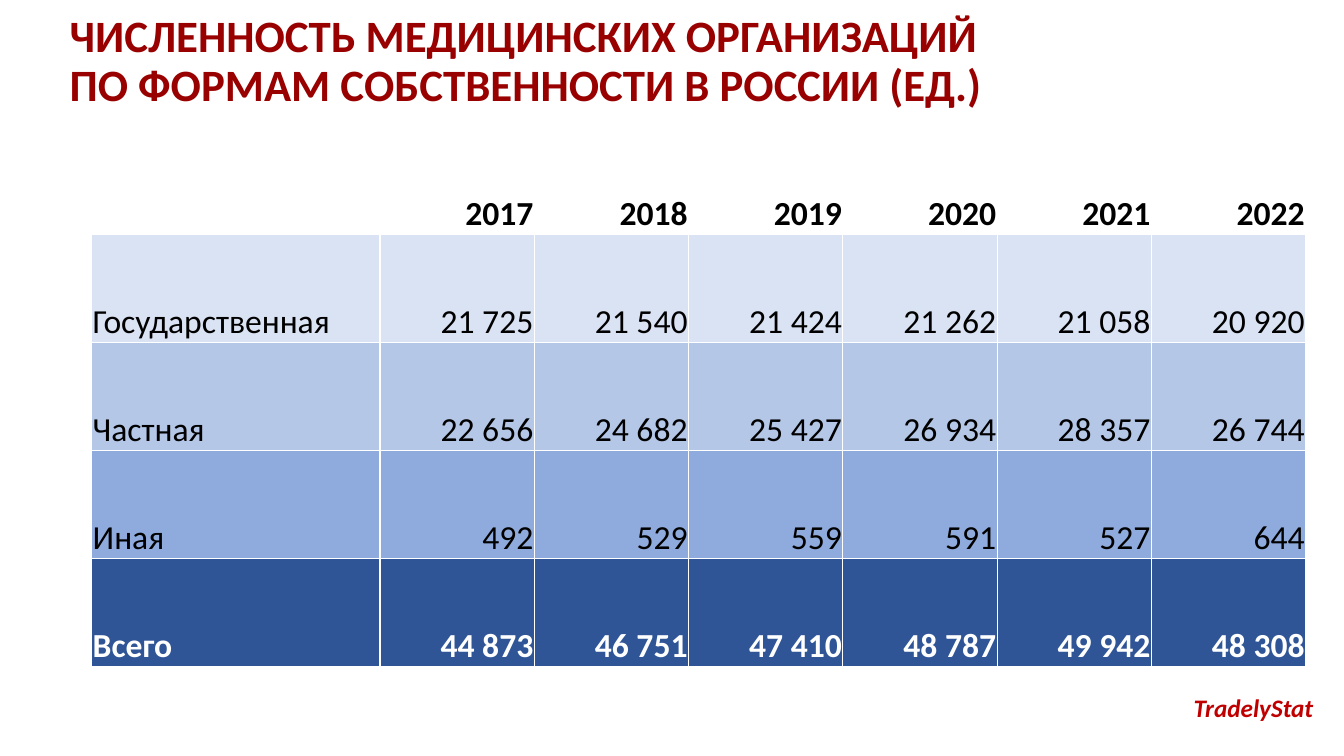
import dataclasses
import typing

import lxml.etree
import pptx
import pptx.dml.color
import pptx.enum.text
import pptx.oxml.ns
import pptx.util

Inches = pptx.util.Inches
Pt = pptx.util.Pt
PP_ALIGN = pptx.enum.text.PP_ALIGN
MSO_ANCHOR = pptx.enum.text.MSO_ANCHOR
MSO_AUTO_SIZE = pptx.enum.text.MSO_AUTO_SIZE

COLORS = {
    "title": "990000",
    "source": "C00000",
    "text": "000000",
    "white": "FFFFFF",
    "state": "DAE3F3",
    "private": "B4C7E7",
    "other": "8FAADC",
    "total": "2F5597",
}
FONT = "Calibri"
LABEL_WIDTH = 2.86
YEAR_WIDTH = 1.53
ROW_HEIGHT = 1.07


@dataclasses.dataclass(frozen=True)
class TableRow:
    label: str
    values: tuple[str, ...]
    fill: str
    color: str = "text"
    bold: bool = False


ROWS = [
    TableRow("", ("2017", "2018", "2019", "2020", "2021", "2022"), "white", bold=True),
    TableRow("Государственная", ("21 725", "21 540", "21 424", "21 262", "21 058", "20 920"), "state"),
    TableRow("Частная", ("22 656", "24 682", "25 427", "26 934", "28 357", "26 744"), "private"),
    TableRow("Иная", ("492", "529", "559", "591", "527", "644"), "other"),
    TableRow("Всего", ("44 873", "46 751", "47 410", "48 787", "49 942", "48 308"), "total", "white", True),
]


def apply(target: typing.Any, values: dict[str, typing.Any]) -> None:
    for name, value in values.items():
        setattr(target, name, value)


def rgb(color: str) -> pptx.dml.color.RGBColor:
    return pptx.dml.color.RGBColor.from_string(COLORS[color])


def write(tf: typing.Any, text: str, color: str, paragraph: dict[str, typing.Any],
          font: dict[str, typing.Any]) -> None:
    p = tf.paragraphs[0]
    apply(p, paragraph)
    r = p.add_run()
    r.text = text
    apply(r.font, {"name": FONT, **font})
    r.font.color.rgb = rgb(color)


def add_borders(cell: typing.Any) -> None:
    qn = pptx.oxml.ns.qn
    properties = cell._tc.get_or_add_tcPr()
    for side in ("lnL", "lnR", "lnT", "lnB"):
        line = lxml.etree.SubElement(properties, qn(f"a:{side}"), w=str(Pt(1)))
        fill = lxml.etree.SubElement(line, qn("a:solidFill"))
        lxml.etree.SubElement(fill, qn("a:srgbClr"), val=COLORS["white"])


def add_title(s: typing.Any) -> None:
    sp = s.shapes.title
    apply(sp, {"left": Inches(0.59), "top": Inches(0.56), "width": Inches(9.51), "height": Inches(0.59)})
    apply(sp.text_frame, {"word_wrap": True, "auto_size": MSO_AUTO_SIZE.NONE,
                          "vertical_anchor": MSO_ANCHOR.BOTTOM})
    write(sp.text_frame, "ЧИСЛЕННОСТЬ МЕДИЦИНСКИХ ОРГАНИЗАЦИЙ ПО ФОРМАМ СОБСТВЕННОСТИ В РОССИИ (ЕД.)",
          "title", {"alignment": PP_ALIGN.LEFT, "line_spacing": 0.9, "space_after": Pt(6)},
          {"size": Pt(32), "bold": True})


def add_source(s: typing.Any) -> None:
    sp = s.shapes.add_textbox(Inches(11.74), Inches(6.82), Inches(1.48), Inches(0.4))
    apply(sp.text_frame, {"word_wrap": False, "auto_size": MSO_AUTO_SIZE.SHAPE_TO_FIT_TEXT})
    write(sp.text_frame, "TradelyStat", "source", {"space_after": Pt(6)},
          {"size": Pt(18), "bold": True, "italic": True})


def add_ownership_table(s: typing.Any, rows: list[TableRow]) -> None:
    years = len(rows[0].values)
    table = s.shapes.add_table(len(rows), years + 1, Inches(0.91), Inches(1.26),
                               Inches(LABEL_WIDTH + years * YEAR_WIDTH),
                               Inches(len(rows) * ROW_HEIGHT)).table
    apply(table, {"first_row": False, "horz_banding": False})
    for i, column in enumerate(table.columns):
        column.width = Inches(YEAR_WIDTH if i else LABEL_WIDTH)
    for row, line in zip(rows, table.rows):
        line.height = Inches(ROW_HEIGHT)
        for i, (text, cell) in enumerate(zip((row.label, *row.values), line.cells)):
            add_borders(cell)
            cell.fill.solid()
            cell.fill.fore_color.rgb = rgb(row.fill)
            apply(cell, {"vertical_anchor": MSO_ANCHOR.BOTTOM, "margin_left": Inches(0.01),
                         "margin_right": Inches(0.01), "margin_top": Inches(0.01), "margin_bottom": 0})
            if text:
                write(cell.text_frame, text, row.color,
                      {"alignment": PP_ALIGN.RIGHT if i else PP_ALIGN.LEFT},
                      {"size": Pt(24), "bold": row.bold})


def main() -> None:
    prs = pptx.Presentation()
    apply(prs, {"slide_width": Inches(13.33), "slide_height": Inches(7.5)})
    s = prs.slides.add_slide(prs.slide_layouts[5])
    add_title(s)
    add_source(s)
    add_ownership_table(s, ROWS)
    prs.save("out.pptx")


if __name__ == "__main__":
    main()
